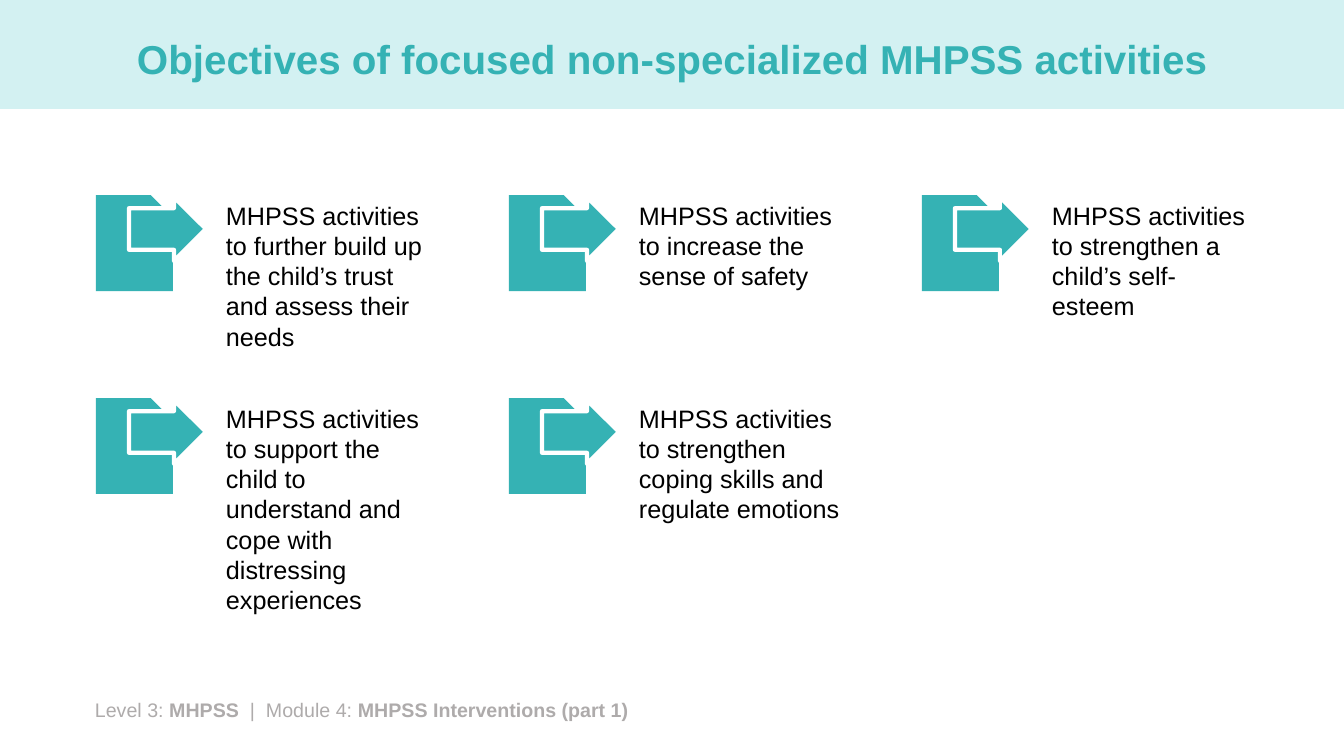
from dataclasses import dataclass

from pptx import Presentation
from pptx.dml.color import RGBColor
from pptx.enum.shapes import MSO_SHAPE
from pptx.enum.text import MSO_ANCHOR, MSO_AUTO_SIZE, PP_ALIGN
from pptx.util import Pt

RECTANGLE = MSO_SHAPE.RECTANGLE
SNIPPED_CARD = MSO_SHAPE.SNIP_1_RECTANGLE
RIGHT_ARROW = MSO_SHAPE.RIGHT_ARROW
MIDDLE = MSO_ANCHOR.MIDDLE
CENTER = PP_ALIGN.CENTER
NO_AUTOFIT = MSO_AUTO_SIZE.NONE
TITLE_ONLY = 5

# Content
TITLE = "Objectives of focused non-specialized MHPSS activities"
OBJECTIVES = [
    "MHPSS activities to further build up the child’s trust and assess their needs",
    "MHPSS activities to increase the sense of safety",
    "MHPSS activities to strengthen a child’s self-esteem",
    "MHPSS activities to support the child to understand and cope with distressing experiences",
    "MHPSS activities to strengthen coping skills and regulate emotions",
]
FOOTER = [  # text, bold
    ("Level 3: ", False),
    ("MHPSS", True),
    ("  |  Module 4: ", False),
    ("MHPSS Interventions (part 1)", True),
]


@dataclass(frozen=True)
class Theme:
    font: str = "Arial"
    teal: RGBColor = RGBColor(0x35, 0xB2, 0xB4)
    pale: RGBColor = RGBColor(0xD3, 0xF1, 0xF2)
    white: RGBColor = RGBColor(0xFF, 0xFF, 0xFF)
    black: RGBColor = RGBColor(0, 0, 0)
    grey: RGBColor = RGBColor(0xAE, 0xAB, 0xAB)
    title_size: float = 28.8
    body_size: int = 18
    footer_size: int = 14
    outline: int = 3


THEME = Theme()

# Layout in px
PAGE_WIDTH, PAGE_HEIGHT = 1344, 756
COLUMNS = 3
GRID_LEFT, GRID_TOP = 96, 195
COLUMN_PITCH, ROW_PITCH = 413, 203


def px(length):
    return round(length * 914400 / 100.8)


def place(*lengths):
    return [px(length) for length in lengths]


def add_filled(page, kind, bounds, color, adjustments=()):
    shape = page.shapes.add_shape(kind, *place(*bounds))
    shape.shadow.inherit = False
    shape.fill.solid()
    shape.fill.fore_color.rgb = color
    shape.line.fill.background()
    for index, value in enumerate(adjustments):
        shape.adjustments[index] = value
    return shape


def style(para, size, color, bold=None):
    para.font.name = THEME.font
    para.font.size = Pt(size)
    para.font.color.rgb = color
    para.font.bold = bold


def add_text(page, bounds, spans, size, color):
    box = page.shapes.add_textbox(*place(*bounds))
    box.text_frame.word_wrap = True
    para = box.text_frame.paragraphs[0]
    style(para, size, color)
    for text, bold in spans:
        span = para.add_run()
        span.text = text
        span.font.bold = bold


def add_title(page):
    title = page.shapes.title
    title.left, title.top, title.width, title.height = place(93, 13, 1159, 96)
    frame = title.text_frame
    frame.text = TITLE
    frame.auto_size = NO_AUTOFIT
    frame.word_wrap = True
    frame.vertical_anchor = MIDDLE
    para = frame.paragraphs[0]
    para.alignment = CENTER
    para.line_spacing = 0.9
    style(para, THEME.title_size, THEME.teal, bold=True)


def add_objective(page, left, top, text):
    add_filled(page, SNIPPED_CARD, (left, top, 77, 96), THEME.teal, [0.29])
    arrow = add_filled(page, RIGHT_ARROW, (left + 33, top + 2, 77, 64), THEME.teal, [0.65, 0.5])
    arrow.line.color.rgb = THEME.white
    arrow.line.width = Pt(THEME.outline)
    add_text(page, (left + 120, top, 223, 163), [(text, False)], THEME.body_size, THEME.black)


def main():
    deck = Presentation()
    deck.slide_width, deck.slide_height = place(PAGE_WIDTH, PAGE_HEIGHT)
    page = deck.slides.add_slide(deck.slide_layouts[TITLE_ONLY])

    # Header band behind the title
    band = add_filled(page, RECTANGLE, (0, 0, PAGE_WIDTH, 109), THEME.pale)
    page.shapes.title.element.addprevious(band.element)
    add_title(page)

    # Grid of objectives
    for index, text in enumerate(OBJECTIVES):
        row, column = divmod(index, COLUMNS)
        add_objective(page, GRID_LEFT + column * COLUMN_PITCH, GRID_TOP + row * ROW_PITCH, text)

    # Footer
    add_text(page, (85, 693, 1144, 34), FOOTER, THEME.footer_size, THEME.grey)
    deck.save("out.pptx")


if __name__ == "__main__":
    main()
